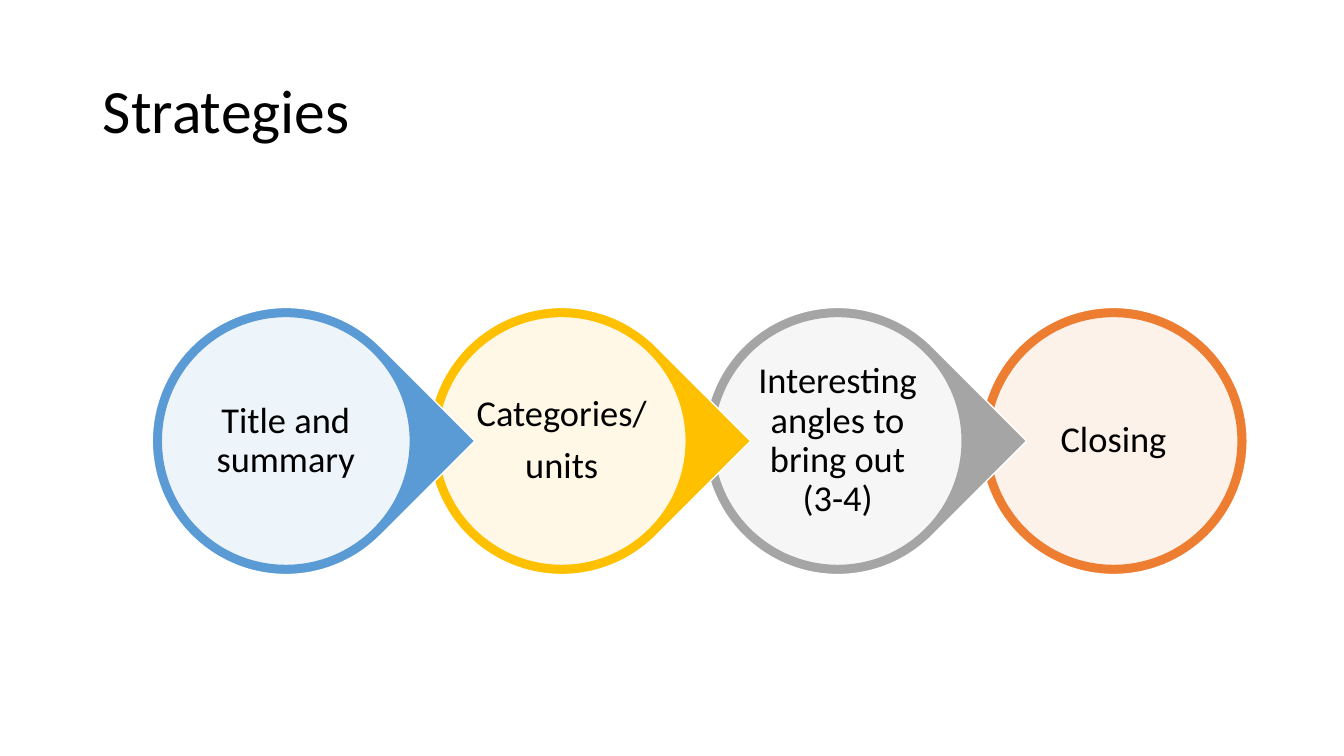
from dataclasses import dataclass

from lxml import etree
from pptx import Presentation
from pptx import util as u
from pptx.dml.color import RGBColor
from pptx.enum import shapes, text
from pptx.oxml.ns import qn


@dataclass(frozen=True)
class Theme:
    font: str = "Calibri"
    ink: str = "000000"
    paper: str = "FFFFFF"
    title_size: int = 44
    step_size: int = 26
    line_spacing: float = 0.9
    step_gap: int = 9
    outline: int = 1
    disc_opacity: int = 90


THEME = Theme()
WIDTH, HEIGHT = u.Inches(13.33), u.Inches(7.5)

# The row of steps: equal columns between the first and the last left edge.
FIRST_LEFT, LAST_LEFT = u.Inches(1.51), u.Inches(9.72)
ROW_TOP = u.Inches(3.05)
DIAMETER = u.Inches(2.65)
RIM = u.Inches(0.09)
LABEL_INSET = u.Inches(0.44)
LABEL_MARGIN = u.Inches(0.03)

STEPS = [
    (["Title and summary"], "5B9BD5"),
    (["Categories/", "units"], "FFC000"),
    (["Interesting angles to bring out (3-4)"], "A5A5A5"),
    (["Closing"], "ED7D31"),
]


def format_paragraph(paragraph, size, alignment):
    paragraph.alignment = alignment
    paragraph.line_spacing = THEME.line_spacing
    paragraph.font.name = THEME.font
    paragraph.font.size = u.Pt(size)
    paragraph.font.color.rgb = RGBColor.from_string(THEME.ink)


def add_title(slide, wording):
    title = slide.shapes.title
    title.left, title.top = u.Inches(0.92), u.Inches(0.4)
    title.width, title.height = u.Inches(11.5), u.Inches(1.45)
    title.text_frame.text = wording
    title.text_frame.vertical_anchor = text.MSO_ANCHOR.MIDDLE
    format_paragraph(title.text_frame.paragraphs[0], THEME.title_size, text.PP_ALIGN.LEFT)


def square_at(left, inset):
    """Bounds of a square set in from a step's outer bounds."""
    side = DIAMETER - 2 * inset
    return left + inset, ROW_TOP + inset, side, side


def add_round(slide, preset, bounds, fill, line):
    figure = slide.shapes.add_shape(preset, *bounds)
    figure.shadow.inherit = False
    figure.fill.solid()
    figure.fill.fore_color.rgb = RGBColor.from_string(fill)
    figure.line.color.rgb = RGBColor.from_string(line)
    figure.line.width = u.Pt(THEME.outline)
    return figure


def set_opacity(figure, percent):
    color = figure.fill._xPr.find(qn("a:solidFill"))[0]
    etree.SubElement(color, qn("a:alpha")).set("val", str(percent * 1000))


def add_label(slide, left, lines):
    frame = slide.shapes.add_textbox(*square_at(left, LABEL_INSET)).text_frame
    frame.word_wrap = True
    frame.vertical_anchor = text.MSO_ANCHOR.MIDDLE
    frame.margin_left = frame.margin_right = LABEL_MARGIN
    frame.margin_top = frame.margin_bottom = LABEL_MARGIN
    frame.text = "\n".join(lines)
    for paragraph in frame.paragraphs:
        format_paragraph(paragraph, THEME.step_size, text.PP_ALIGN.CENTER)
        paragraph.space_after = u.Pt(THEME.step_gap)


def add_step(slide, left, lines, color, points_on):
    """Coloured ring with a pale disc; points_on turns the ring into an arrow."""
    preset = shapes.MSO_SHAPE.TEAR if points_on else shapes.MSO_SHAPE.OVAL
    ring = add_round(slide, preset, square_at(left, 0), color, THEME.paper)
    ring.rotation = 45 if points_on else 0
    disc = add_round(slide, shapes.MSO_SHAPE.OVAL, square_at(left, RIM), THEME.paper, color)
    set_opacity(disc, THEME.disc_opacity)
    add_label(slide, left, lines)


def main():
    deck = Presentation()
    deck.slide_width, deck.slide_height = WIDTH, HEIGHT
    slide = deck.slides.add_slide(deck.slide_layouts[5])
    add_title(slide, "Strategies")

    last = len(STEPS) - 1
    pitch = (LAST_LEFT - FIRST_LEFT) // last
    # Right to left, so that each point lies over the next ring.
    for column, (lines, color) in reversed(list(enumerate(STEPS))):
        add_step(slide, FIRST_LEFT + column * pitch, lines, color, column < last)

    deck.save("out.pptx")


if __name__ == "__main__":
    main()
